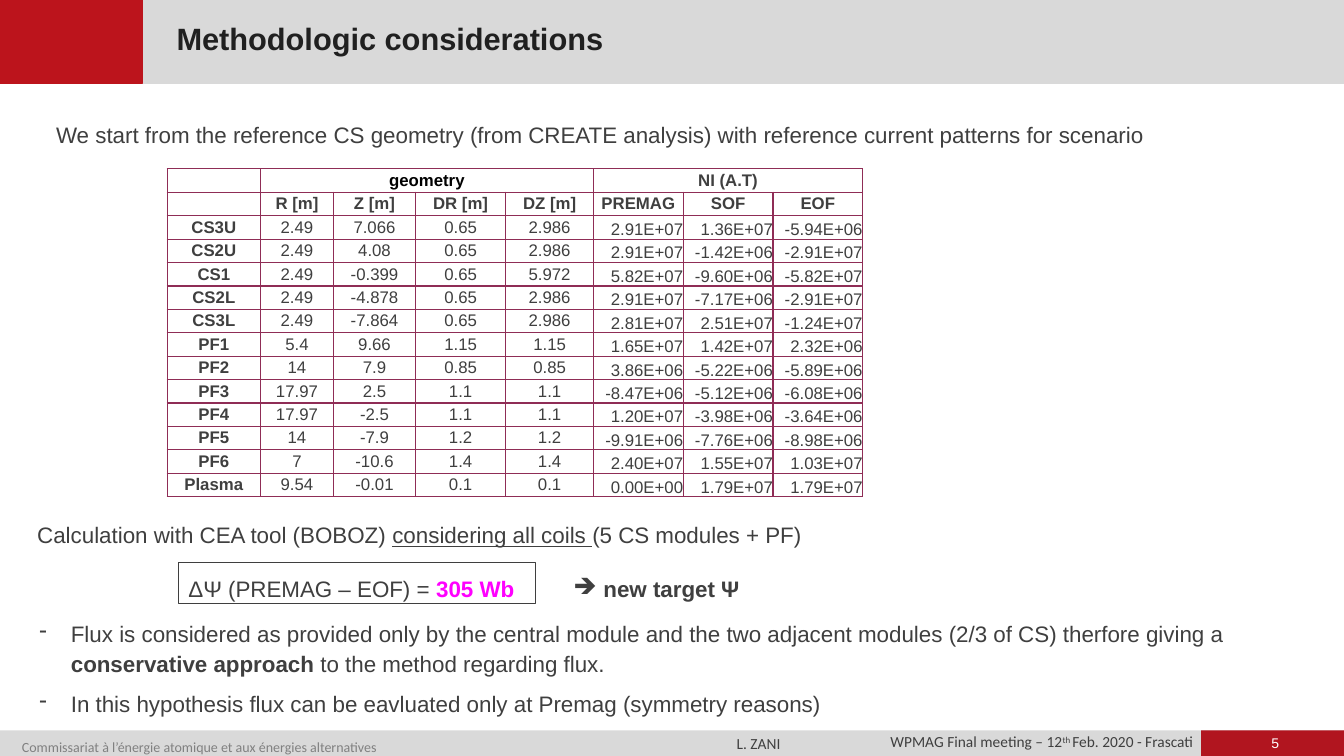
from collections import namedtuple
from lxml.etree import SubElement
from pptx import Presentation
from pptx.dml.color import RGBColor
from pptx.enum.shapes import MSO_SHAPE
from pptx.enum.text import MSO_ANCHOR, PP_ALIGN
from pptx.oxml import parse_xml
from pptx.oxml.ns import nsdecls, qn
from pptx.util import Pt

Box = namedtuple("Box", "left top width height")

INK, RED, GREY = "3F3F3F", "B1151F", "D9D9D9"
BODY = {"name": "Arial", "size": 16, "color": INK}
FOOTER = {"name": "Calibri", "size": 11, "color": INK}
CELL = {"name": "Arial", "size": 12, "color": INK}

COLUMNS = [66.5, 52.3, 58.5, 64.5, 62.7, 64.1, 64.1, 64.1]
HEADINGS = ["", "R [m]", "Z [m]", "DR [m]", "DZ [m]", "PREMAG", "SOF", "EOF"]
COILS = """
CS3U 2.49 7.066 0.65 2.986 2.91E+07 1.36E+07 -5.94E+06
CS2U 2.49 4.08 0.65 2.986 2.91E+07 -1.42E+06 -2.91E+07
CS1 2.49 -0.399 0.65 5.972 5.82E+07 -9.60E+06 -5.82E+07
CS2L 2.49 -4.878 0.65 2.986 2.91E+07 -7.17E+06 -2.91E+07
CS3L 2.49 -7.864 0.65 2.986 2.81E+07 2.51E+07 -1.24E+07
PF1 5.4 9.66 1.15 1.15 1.65E+07 1.42E+07 2.32E+06
PF2 14 7.9 0.85 0.85 3.86E+06 -5.22E+06 -5.89E+06
PF3 17.97 2.5 1.1 1.1 -8.47E+06 -5.12E+06 -6.08E+06
PF4 17.97 -2.5 1.1 1.1 1.20E+07 -3.98E+06 -3.64E+06
PF5 14 -7.9 1.2 1.2 -9.91E+06 -7.76E+06 -8.98E+06
PF6 7 -10.6 1.4 1.4 2.40E+07 1.55E+07 1.03E+07
Plasma 9.54 -0.01 0.1 0.1 0.00E+00 1.79E+07 1.79E+07
"""


def color(value):
    return RGBColor.from_string(value)


def points(box):
    return [Pt(length) for length in box]


def inside(box, left, top, width, height):
    return Box(box.left + left, box.top + top, width, height)


def add_span(para, text, style):
    span = para.add_run()
    span.text = text
    for key, value in style.items():
        if key == "color":
            span.font.color.rgb = color(value)
        elif key == "baseline":
            span.font._element.set("baseline", str(value * 1000))
        else:
            setattr(span.font, key, Pt(value) if key == "size" else value)


def write(para, spans, style, bullet=None, indent=0, **layout):
    if bullet:
        settings = para._p.get_or_add_pPr()
        settings.set("marL", str(Pt(indent)))
        settings.set("indent", str(-Pt(indent)))
        SubElement(settings, qn("a:buChar"), char=bullet)
    for key, value in layout.items():
        setattr(para, key, value)
    for text, changes in spans:
        add_span(para, text, {**style, **changes})


def set_frame(frame, margins, anchor=MSO_ANCHOR.TOP, wrap=True):
    frame.word_wrap = wrap
    frame.vertical_anchor = anchor
    sides = ("margin_left", "margin_right", "margin_top", "margin_bottom")
    for side, margin in zip(sides, (margins[0], margins[0], margins[1], margins[1])):
        setattr(frame, side, Pt(margin))


def add_text(page, box, paragraphs, style, margins=(7.2, 3.6),
             anchor=MSO_ANCHOR.TOP, wrap=True, gap=0, **layout):
    frame = page.shapes.add_textbox(*points(box)).text_frame
    set_frame(frame, margins, anchor, wrap)
    for index, spans in enumerate(paragraphs):
        para = frame.add_paragraph() if index else frame.paragraphs[0]
        if index:
            para.space_before = Pt(gap)
        write(para, spans, style, **layout)


def add_block(page, box, fill=None, line=None, weight=0.75):
    block = page.shapes.add_shape(MSO_SHAPE.RECTANGLE, *points(box))
    block.shadow.inherit = False
    for part, value in ((block.fill, fill), (block.line.fill, line)):
        if value:
            part.solid()
            part.fore_color.rgb = color(value)
        else:
            part.background()
    if line:
        block.line.width = Pt(weight)
    return block


def draw_header(page, box):
    add_block(page, box, GREY)
    add_block(page, inside(box, -0.5, 0, 102, box.height - 0.5), "BC141C", "BC141C", 1)
    add_text(page, inside(box, 116, 17, 461.5, 29.5),
             [[("Methodologic considerations", {})]],
             {"name": "Arial", "size": 22, "color": "202020", "bold": True},
             margins=(10.1, 3.6), anchor=MSO_ANCHOR.MIDDLE, line_spacing=0.8)


def draw_footer(page, box):
    add_block(page, box, GREY)
    add_block(page, inside(box, 858, 0, 102, box.height), RED)
    margins = (5.67, 0)
    add_text(page, inside(box, 618, 3, 240, 12),
             [[("WPMAG Final meeting – 12", {}), ("th ", {"baseline": 30}),
               ("Feb. 2020 - Frascati", {})]],
             FOOTER, margins, alignment=PP_ALIGN.RIGHT, line_spacing=0.9)
    add_text(page, inside(box, 10, 1, 434, 15),
             [[("Commissariat à l’énergie atomique et aux énergies alternatives", {})]],
             {**FOOTER, "size": 10, "color": "808080"}, margins, line_spacing=1.4)
    add_text(page, inside(box, 520.5, 2.5, 43, 13.5), [[("L. ZANI", {})]],
             FOOTER, margins, wrap=False)
    add_text(page, inside(box, 878, 3, 66, 12), [[("5", {})]],
             {"name": "Arial", "size": 10, "color": "FFFFFF"}, margins,
             alignment=PP_ALIGN.CENTER)


def style_cell(cell, text, style, alignment, anchor):
    set_cell = {"margin_left": 0, "margin_right": 0, "margin_top": 0,
                "margin_bottom": 0, "vertical_anchor": anchor}
    for key, value in set_cell.items():
        setattr(cell, key, value)
    cell.fill.background()
    settings = cell._tc.get_or_add_tcPr()
    for index, side in enumerate("LRTB"):
        settings.insert(index, parse_xml(
            f'<a:ln{side} {nsdecls("a")} w="{Pt(1)}"><a:solidFill>'
            f'<a:srgbClr val="8F2D56"/></a:solidFill></a:ln{side}>'))
    para = cell.text_frame.paragraphs[0]
    if text:
        write(para, [(text, {})], style, alignment=alignment)
    else:
        SubElement(para._p, qn("a:endParaRPr"), sz="1200")


def draw_coil_table(page, box):
    groups = ["", "geometry", "", "", "", "NI (A.T)", "", ""]
    rows = [groups, HEADINGS] + [line.split() for line in COILS.strip().splitlines()]
    table = page.shapes.add_table(len(rows), len(COLUMNS), *points(box)).table
    table.first_row = table.horz_banding = False
    for column, width in zip(table.columns, COLUMNS):
        column.width = Pt(width)
    for row_index, row in enumerate(rows):
        table.rows[row_index].height = Pt(box.height / len(rows))
        for column_index, text in enumerate(row):
            is_current = row_index > 1 and column_index > 4
            style = {**CELL, "bold": row_index < 2 or column_index == 0}
            if text == "geometry":
                style["color"] = "000000"
            style_cell(table.cell(row_index, column_index), text, style,
                       PP_ALIGN.RIGHT if is_current else PP_ALIGN.CENTER,
                       MSO_ANCHOR.BOTTOM if is_current else MSO_ANCHOR.MIDDLE)
    for first, last in ((1, 4), (5, 7)):
        table.cell(0, first).merge(table.cell(0, last))


def draw_flux_result(page, box):
    layout = {"alignment": PP_ALIGN.JUSTIFY, "line_spacing": Pt(25)}
    add_text(page, inside(box, 0, 0, 626, 29.5),
             [[("Calculation with CEA tool (BOBOZ) ", {}),
               ("considering all coils ", {"underline": True}),
               ("(5 CS modules + PF)", {})]], BODY, **layout)
    frame = add_block(page, inside(box, 108, 38.7, 255, 29.5), line=INK).text_frame
    set_frame(frame, (7.2, 3.6))
    write(frame.paragraphs[0],
          [("ΔΨ (PREMAG – EOF) = ", {}),
           ("305 Wb", {"color": "FF00FF", "bold": True})], BODY, **layout)
    add_text(page, inside(box, 383, 38.7, 136, 29.5),
             [[("new target Ψ", {"bold": True})]], BODY,
             bullet="➔", indent=21.5, **layout)


def draw_remarks(page, box):
    add_text(page, box, [
        [("Flux is considered as provided only by the central module and the two "
          "adjacent modules (2/3 of CS) therfore giving a ", {}),
         ("conservative approach ", {"bold": True}),
         ("to the method regarding flux.", {})],
        [("In this hypothesis flux can be eavluated only at Premag "
          "(symmetry reasons)", {})],
    ], BODY, gap=6, bullet="-", indent=22.5,
        alignment=PP_ALIGN.JUSTIFY, line_spacing=Pt(22))


def main():
    deck = Presentation()
    deck.slide_width, deck.slide_height = Pt(960), Pt(540)
    page = deck.slides.add_slide(deck.slide_layouts[6])
    draw_header(page, Box(0, -2, 960, 62))
    draw_footer(page, Box(0, 521.7, 960, 18.3))
    add_text(page, Box(33, 77, 909, 32.5),
             [[("We start from the reference CS geometry (from CREATE analysis) "
                "with reference current patterns for scenario", {})]],
             BODY, alignment=PP_ALIGN.JUSTIFY, line_spacing=Pt(25))
    draw_coil_table(page, Box(119.5, 120.6, sum(COLUMNS), 234.5))
    draw_flux_result(page, Box(19.5, 363, 626, 68.2))
    draw_remarks(page, Box(21, 436.3, 860.5, 80))
    deck.save("out.pptx")


if __name__ == "__main__":
    main()
